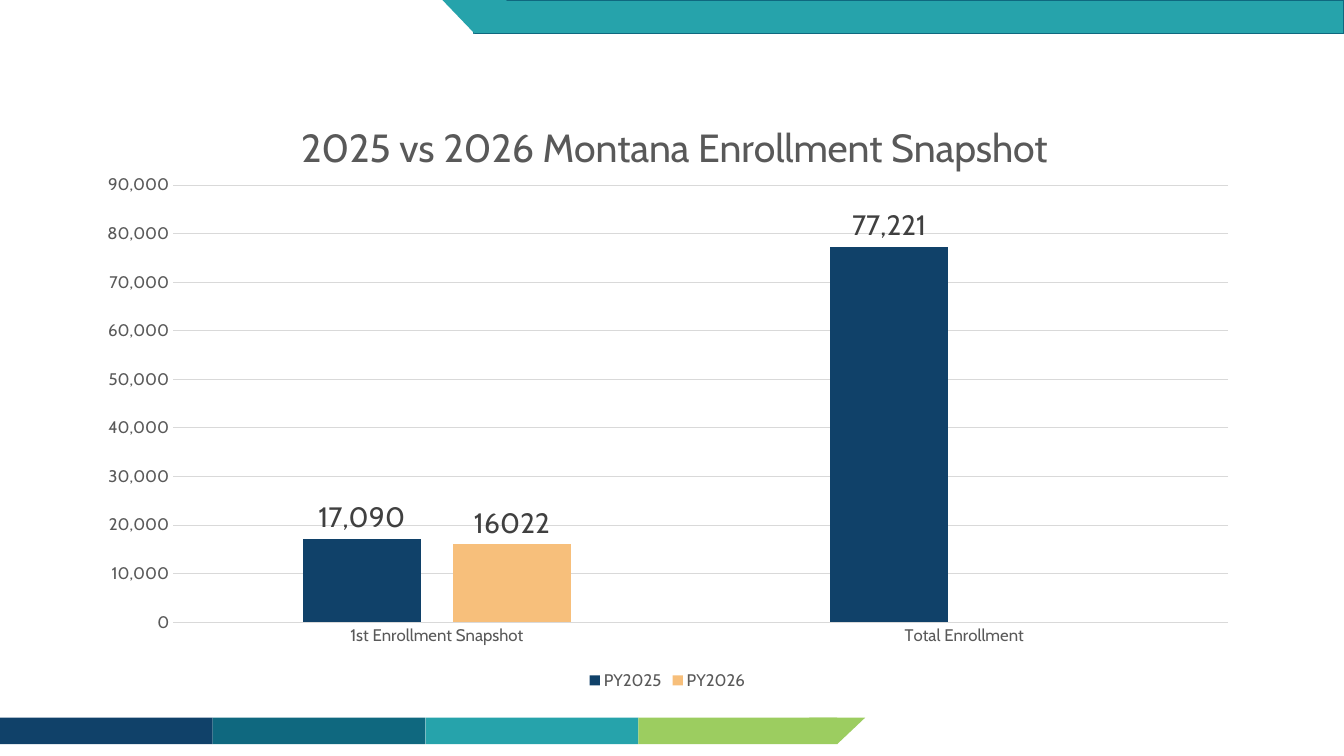
from dataclasses import dataclass

from lxml import etree
from pptx import Presentation
from pptx.chart.data import CategoryChartData
from pptx.dml.color import RGBColor
from pptx.enum.chart import XL_CHART_TYPE, XL_LABEL_POSITION, XL_LEGEND_POSITION, XL_TICK_MARK
from pptx.enum.shapes import MSO_SHAPE
from pptx.oxml.ns import qn
from pptx.util import Pt

FONT = "Cabin"
NAVY, DEEP_TEAL, TEAL, GREEN, ORANGE = "104169", "0F687F", "26A3AB", "9CCD60", "F7BF7B"
GREY, DARK_GREY, LIGHT_GREY = "595959", "404040", "D9D9D9"


@dataclass
class Band:
    left: float
    top: float
    width: float
    height: float
    fill: str
    line: str = ""
    preset: MSO_SHAPE = MSO_SHAPE.RECTANGLE
    rotation: int = 0


@dataclass
class EnrollmentSeries:
    name: str
    values: tuple
    color: str
    number_format: str


BAND_WIDTH, BAND_TOP, BAND_HEIGHT = 152, 512.6, 18.9
TIP = {"preset": MSO_SHAPE.ISOSCELES_TRIANGLE, "rotation": 180}
BANDS = [
    *(Band(index * BAND_WIDTH, BAND_TOP, BAND_WIDTH, BAND_HEIGHT, fill)
      for index, fill in enumerate((NAVY, DEEP_TEAL, TEAL))),
    Band(3 * BAND_WIDTH, BAND_TOP, 142, BAND_HEIGHT, GREEN),
    Band(578, BAND_TOP, 40, BAND_HEIGHT, GREEN, **TIP),
    Band(338.5, 0, 621.5, 24, TEAL, DEEP_TEAL),
    Band(316, 0, 46, 24, TEAL, **TIP),
]
CATEGORIES = ("1st Enrollment Snapshot", "Total Enrollment")
SERIES = [
    EnrollmentSeries("PY2025", (17090, 77221), NAVY, "#,##0"),
    EnrollmentSeries("PY2026", (16022, None), ORANGE, "General"),
]


def rgb(color: str) -> RGBColor:
    return RGBColor.from_string(color)


def paint(fill, color: str) -> None:
    fill.solid()
    fill.fore_color.rgb = rgb(color)


def set_font(font, size: float, color: str) -> None:
    for name, value in {"name": FONT, "size": Pt(size), "bold": False}.items():
        setattr(font, name, value)
    font.color.rgb = rgb(color)


def set_line(line, color: str, width: float = 0.75) -> None:
    line.color.rgb = rgb(color)
    line.width = Pt(width)


def draw_band(slide, band: Band) -> None:
    shape = slide.shapes.add_shape(
        band.preset, Pt(band.left), Pt(band.top), Pt(band.width), Pt(band.height))
    shape.shadow.inherit = False
    shape.rotation = band.rotation
    paint(shape.fill, band.fill)
    if band.line:
        set_line(shape.line, band.line, 1)
    else:
        shape.line.fill.background()


def set_layout(parent, after: str, settings: dict) -> None:
    """Place a chart part by fractions of the chart area."""
    for old_layout in parent.findall(qn("c:layout")):
        parent.remove(old_layout)
    layout = etree.Element(qn("c:layout"))
    manual = etree.SubElement(layout, qn("c:manualLayout"))
    for tag, value in settings.items():
        etree.SubElement(manual, qn(f"c:{tag}")).set("val", str(value))
    if after:
        parent.find(qn(after)).addnext(layout)
    else:
        parent.insert(0, layout)


def style_axes(chart) -> None:
    for axis in (chart.category_axis, chart.value_axis):
        axis.major_tick_mark = axis.minor_tick_mark = XL_TICK_MARK.NONE
        set_font(axis.tick_labels.font, 12, GREY)
    set_line(chart.category_axis.format.line, LIGHT_GREY)
    value_axis = chart.value_axis
    for name, value in {"minimum_scale": 0, "maximum_scale": 90000, "major_unit": 10000}.items():
        setattr(value_axis, name, value)
    value_axis.format.line.fill.background()
    set_line(value_axis.major_gridlines.format.line, LIGHT_GREY)
    value_axis.tick_labels.number_format = "#,##0"
    value_axis.tick_labels.number_format_is_linked = False


def style_series(chart) -> None:
    plot = chart.plots[0]
    for name, value in {"gap_width": 219, "overlap": -27, "vary_by_categories": False}.items():
        setattr(plot, name, value)
    for series, enrollment in zip(plot.series, SERIES):
        paint(series.format.fill, enrollment.color)
        series.invert_if_negative = False
        labels = series.data_labels
        label_format = {
            "show_value": True,
            "number_format": enrollment.number_format,
            "number_format_is_linked": False,
            "position": XL_LABEL_POSITION.OUTSIDE_END,
        }
        for name, value in label_format.items():
            setattr(labels, name, value)
        set_font(labels.font, 20, DARK_GREY)


def draw_chart(slide) -> None:
    data = CategoryChartData()
    data.categories = CATEGORIES
    for enrollment in SERIES:
        data.add_series(enrollment.name, enrollment.values)
    chart = slide.shapes.add_chart(
        XL_CHART_TYPE.COLUMN_CLUSTERED, Pt(60), Pt(63.5), Pt(833.5), Pt(432.5), data).chart
    set_font(chart.font, 10, "000000")

    # Title
    chart.has_title = True
    title = chart.chart_title
    title.include_in_layout = False
    paragraph = title.text_frame.paragraphs[0]
    run = paragraph.add_run()
    run.text = "2025 vs 2026 Montana Enrollment Snapshot"
    set_font(run.font, 28, GREY)
    set_layout(title._element, "c:tx",
               {"xMode": "edge", "yMode": "edge", "x": 0.18, "y": 0.04})

    # Legend
    chart.has_legend = True
    chart.legend.position = XL_LEGEND_POSITION.BOTTOM
    chart.legend.include_in_layout = False
    set_font(chart.legend.font, 12, GREY)

    # Axes, columns and plot area
    style_axes(chart)
    style_series(chart)
    plot_area = chart._chartSpace.find(f".//{qn('c:plotArea')}")
    set_layout(plot_area, "", {
        "layoutTarget": "inner", "xMode": "edge", "yMode": "edge",
        "x": 0.0765, "y": 0.159, "w": 0.904, "h": 0.722})


def main() -> None:
    presentation = Presentation()
    presentation.slide_width, presentation.slide_height = Pt(960), Pt(540)
    slide = presentation.slides.add_slide(presentation.slide_layouts[6])
    paint(slide.background.fill, "FFFFFF")
    for band in BANDS:
        draw_band(slide, band)
    draw_chart(slide)
    presentation.save("out.pptx")


if __name__ == "__main__":
    main()
